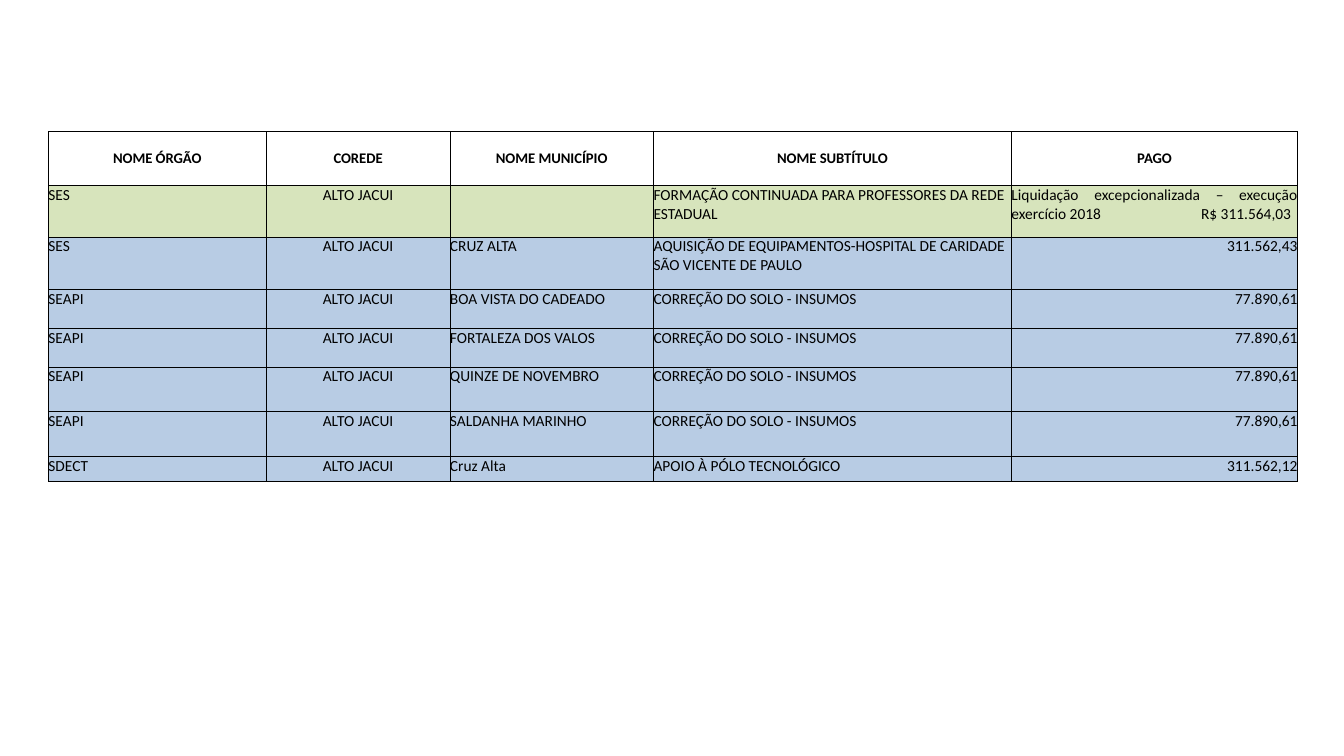
import lxml.etree
import pptx
import pptx.dml.color
import pptx.enum.text
import pptx.oxml.ns
import pptx.util

Cm = pptx.util.Cm
ALIGN = pptx.enum.text.PP_ALIGN
ANCHOR = pptx.enum.text.MSO_ANCHOR

BOX = (1.22, 3.32, 31.48, 8.8)
WIDTHS = [5.49, 4.63, 5.13, 9.02, 7.21]
HEIGHTS = [1.35, 1.3, 1.32, 0.99, 0.97, 1.12, 1.14, 0.61]
SOIL = "CORREÇÃO DO SOLO - INSUMOS"
HEADS = ["NOME ÓRGÃO", "COREDE", "NOME MUNICÍPIO", "NOME SUBTÍTULO", "PAGO"]
ROWS = [
    ("SES", "", "FORMAÇÃO CONTINUADA PARA PROFESSORES DA REDE ESTADUAL",
     "Liquidação excepcionalizada – execução exercício 2018\tR$ 311.564,03"),
    ("SES", "CRUZ ALTA",
     "AQUISIÇÃO DE EQUIPAMENTOS-HOSPITAL DE CARIDADE SÃO VICENTE DE PAULO",
     "311.562,43"),
    ("SEAPI", "BOA VISTA DO CADEADO", SOIL, "77.890,61"),
    ("SEAPI", "FORTALEZA DOS VALOS", SOIL, "77.890,61"),
    ("SEAPI", "QUINZE DE NOVEMBRO", SOIL, "77.890,61"),
    ("SEAPI", "SALDANHA MARINHO", SOIL, "77.890,61"),
    ("SDECT", "Cruz Alta", "APOIO À PÓLO TECNOLÓGICO", "311.562,12"),
]
SIDES = [ALIGN.LEFT, ALIGN.CENTER, ALIGN.LEFT, ALIGN.LEFT, ALIGN.RIGHT]
PLAIN = {"name": "Calibri", "size": pptx.util.Pt(11), "bold": False}
HEAVY = {**PLAIN, "size": pptx.util.Pt(10.5), "bold": True}
INSET = dict.fromkeys(
    ["margin_left", "margin_right", "margin_top", "margin_bottom"], 0)
FLAT = {"first_row": False, "horz_banding": False}


def color(code):
    """Turn a hex string into a colour."""
    return pptx.dml.color.RGBColor.from_string(code)


def apply(item, form):
    """Set attributes from a dict of format values."""
    for key, value in form.items():
        setattr(item, key, value)


def add(parent, tag, **attrs):
    """Append a drawing element to a parent."""
    return lxml.etree.SubElement(parent, pptx.oxml.ns.qn(tag), attrs)


def frame(cell):
    """Draw thin black borders around a cell."""
    props = cell._tc.get_or_add_tcPr()
    for side in "LRTB":
        line = add(props, f"a:ln{side}", w=str(pptx.util.Pt(0.5)))
        add(add(line, "a:solidFill"), "a:srgbClr", val="000000")


def write(cell, text, side, font, fill, anchor):
    """Fill one cell with formatted text."""
    frame(cell)
    cell.fill.solid()
    cell.fill.fore_color.rgb = color(fill)
    apply(cell, {**INSET, "vertical_anchor": anchor})
    para = cell.text_frame.paragraphs[0]
    para.alignment = side
    if "\t" in text:
        tabs = add(para._p.get_or_add_pPr(), "a:tabLst")
        add(tabs, "a:tab", pos=str(Cm(7.05)), algn="r")
    if text:
        run = para.add_run()
        run.text = text
        apply(run.font, font)
        run.font.color.rgb = color("000000")


def grid(slide, left, top, width, height):
    """Place the payments table in the given box."""
    shape = slide.shapes.add_table(
        len(HEIGHTS), len(WIDTHS), Cm(left), Cm(top), Cm(width), Cm(height))
    table = shape.table
    apply(table, FLAT)
    for col, part in zip(table.columns, WIDTHS):
        col.width = Cm(width * part / sum(WIDTHS))
    for row, part in zip(table.rows, HEIGHTS):
        row.height = Cm(height * part / sum(HEIGHTS))
    for c, head in enumerate(HEADS):
        write(table.cell(0, c), head, ALIGN.CENTER, HEAVY, "FFFFFF",
              ANCHOR.MIDDLE)
    for r, (body, town, title, paid) in enumerate(ROWS, 1):
        fill = "D7E4BC" if r == 1 else "B8CCE4"
        for c, text in enumerate([body, "ALTO JACUI", town, title, paid]):
            side = ALIGN.JUSTIFY if "\t" in text else SIDES[c]
            write(table.cell(r, c), text, side, PLAIN, fill, ANCHOR.TOP)


def main():
    """Build and save the deck."""
    deck = pptx.Presentation()
    apply(deck, {"slide_width": Cm(33.87), "slide_height": Cm(19.05)})
    slide = deck.slides.add_slide(deck.slide_layouts[6])
    grid(slide, *BOX)
    deck.save("out.pptx")


if __name__ == "__main__":
    main()
